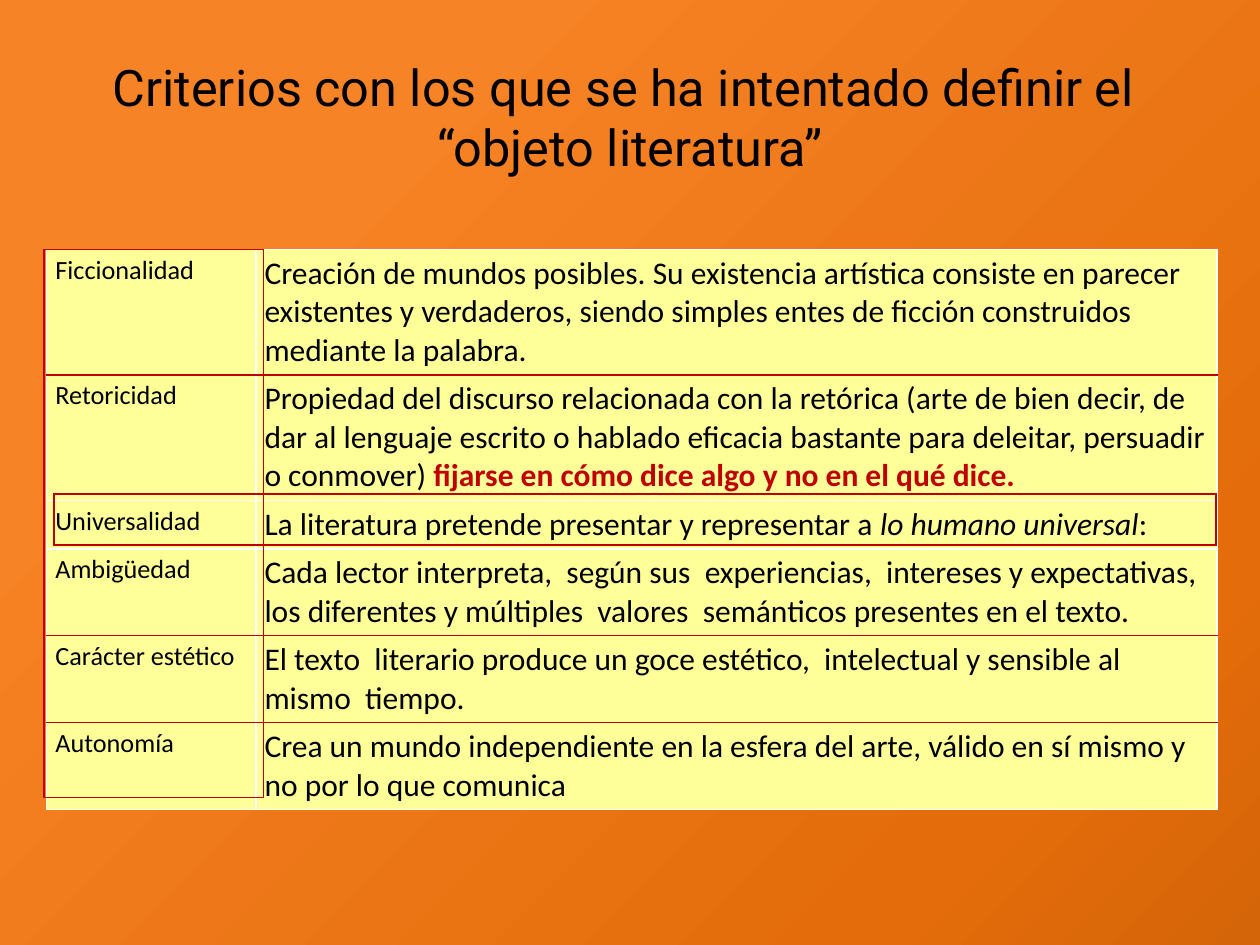
from dataclasses import dataclass

from lxml.etree import SubElement
from pptx import Presentation
from pptx.dml.color import RGBColor
from pptx.enum.text import MSO_ANCHOR, PP_ALIGN
from pptx.oxml.ns import qn
from pptx.util import Inches, Pt


@dataclass(frozen=True)
class Theme:
    ink: str = "000000"
    red: str = "C00000"
    white: str = "FFFFFF"
    cream: str = "FFFF99"
    back: tuple = ((0, "F68325"), (23, "F68325"), (82, "E46C0A"), (100, "D56509"))
    head_font: str = "Roboto"
    body_font: str = "Calibri"
    head: float = 28.8
    term: float = 15
    body: float = 18
    line: float = 1


THEME = Theme()
HEAD = ("Criterios con los que se ha intentado definir el ", "“objeto literatura”")
COLS = (1.66, 7.63)

# Term, row height, colours of the upper and lower rule, text runs with style
ROWS = (
    ("Ficcionalidad", 0.98, THEME.white, THEME.red, [
        ("Creación de mundos posibles. Su existencia artística consiste en parecer "
         "existentes y verdaderos, siendo simples entes de ficción construidos "
         "mediante la palabra.", "")]),
    ("Retoricidad", 0.98, THEME.red, THEME.white, [
        ("Propiedad del discurso relacionada con la retórica (arte de bien decir, de "
         "dar al lenguaje escrito o hablado eficacia bastante para deleitar, persuadir "
         "o conmover) ", ""),
        ("fijarse en cómo dice algo y no en el qué dice.", "strong")]),
    ("Universalidad", 0.38, THEME.white, THEME.white, [
        ("La literatura pretende presentar y representar a ", ""),
        ("lo humano universal", "italic"),
        (":", "")]),
    ("Ambigüedad", 0.68, THEME.white, THEME.red, [
        ("Cada lector interpreta,  según sus  experiencias,  intereses y expectativas, "
         "los diferentes y múltiples  valores  semánticos presentes en el texto.", "")]),
    ("Carácter estético", 0.68, THEME.red, THEME.red, [
        ("El texto  literario produce un goce estético,  intelectual y sensible al "
         "mismo  tiempo.", "")]),
    ("Autonomía", 0.68, THEME.red, THEME.white, [
        ("Crea un mundo independiente en la esfera del arte, válido en sí mismo y "
         "no por lo que comunica", "")]),
)


def add_run(para, text, font, size, style=""):
    run = para.add_run()
    run.text = text
    run.font.name = font
    run.font.size = Pt(size)
    run.font.bold = style == "strong"
    run.font.italic = style == "italic"
    color = THEME.red if style == "strong" else THEME.ink
    run.font.color.rgb = RGBColor.from_string(color)


def set_edges(cell, left, right, top, bottom):
    """Colour the four borders; call before the fill is set."""
    props = cell._tc.get_or_add_tcPr()
    for tag, color in zip(("lnL", "lnR", "lnT", "lnB"), (left, right, top, bottom)):
        line = SubElement(props, qn(f"a:{tag}"), w=str(Pt(THEME.line)))
        SubElement(SubElement(line, qn("a:solidFill")), qn("a:srgbClr"), val=color)


def add_grid(slide, box, rows, cols):
    grid = slide.shapes.add_table(rows, cols, *map(Inches, box)).table
    grid.first_row = grid.horz_banding = False
    return grid


def paint_back(slide):
    fill = slide.background.fill
    fill.gradient()
    fill.gradient_angle = 315
    stops = slide.element.find(".//" + qn("a:gsLst"))
    for stop in list(stops):
        stops.remove(stop)
    for place, color in THEME.back:
        stop = SubElement(stops, qn("a:gs"), pos=str(place * 1000))
        SubElement(stop, qn("a:srgbClr"), val=color)


def place_title(slide, box):
    title = slide.shapes.title
    title.left, title.top, title.width, title.height = map(Inches, box)
    frame = title.text_frame
    frame.word_wrap = True
    frame.vertical_anchor = MSO_ANCHOR.MIDDLE
    para = frame.paragraphs[0]
    para.alignment = PP_ALIGN.CENTER
    for i, text in enumerate(HEAD):
        if i:
            para.add_line_break()
        add_run(para, text, THEME.head_font, THEME.head)


def add_criteria(slide, box):
    grid = add_grid(slide, box, len(ROWS), len(COLS))
    for col, width in zip(grid.columns, COLS):
        col.width = Inches(width)
    for i, (term, height, top, bottom, runs) in enumerate(ROWS):
        grid.rows[i].height = Inches(height)
        parts = (([(term, "")], THEME.term), (runs, THEME.body))
        for j, (texts, size) in enumerate(parts):
            cell = grid.cell(i, j)
            cell.margin_left = cell.margin_right = Inches(0.07)
            cell.margin_top = cell.margin_bottom = Inches(0.04)
            upper = THEME.red if i == j == 0 else top
            set_edges(cell, THEME.white, THEME.white, upper, bottom)
            cell.fill.solid()
            cell.fill.fore_color.rgb = RGBColor.from_string(THEME.cream)
            for text, style in texts:
                add_run(cell.text_frame.paragraphs[0], text, THEME.body_font, size, style)


def add_frame(slide, box):
    """Outline a region with a one-cell table."""
    cell = add_grid(slide, box, 1, 1).cell(0, 0)
    set_edges(cell, *[THEME.red] * 4)
    cell.fill.background()


def main():
    deck = Presentation()
    deck.slide_width, deck.slide_height = Inches(10), Inches(7.5)
    slide = deck.slides.add_slide(deck.slide_layouts[5])
    paint_back(slide)
    place_title(slide, (0.5, 0.3, 9, 1.25))
    add_criteria(slide, (0.37, 1.98, 9.29, 4.35))
    add_frame(slide, (0.43, 3.92, 9.22, 0.4))
    add_frame(slide, (0.35, 1.98, 1.74, 4.35))
    deck.save("out.pptx")


if __name__ == "__main__":
    main()
